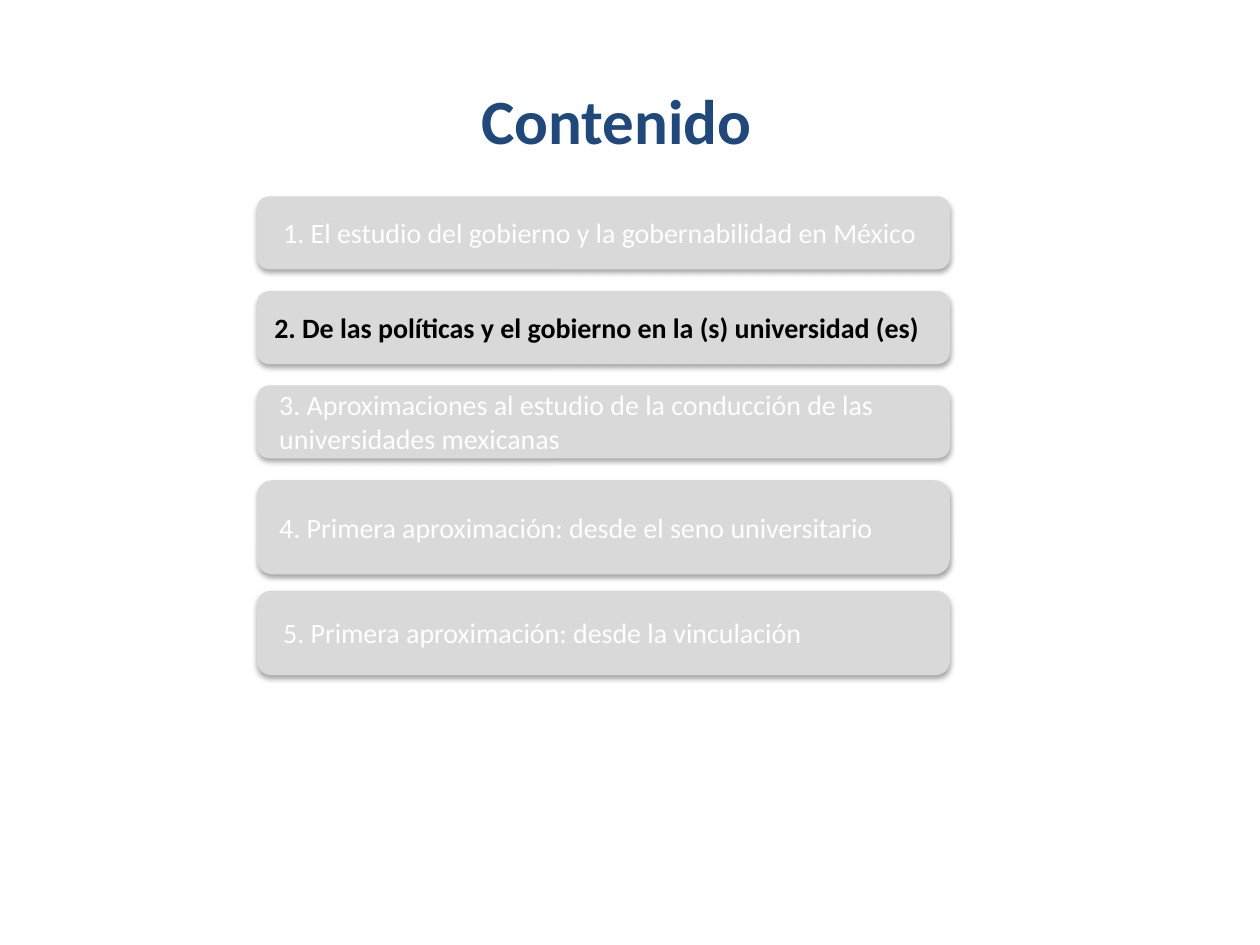
from lxml import etree
from pptx import Presentation
from pptx.dml.color import RGBColor
from pptx.enum.shapes import MSO_SHAPE as Shape
from pptx.enum.text import MSO_ANCHOR as Anchor, MSO_AUTO_SIZE as Fit, PP_ALIGN as Align
from pptx.oxml import parse_xml
from pptx.util import Cm, Pt

GREY = RGBColor(0xD9, 0xD9, 0xD9)
NAVY = RGBColor(0x1F, 0x49, 0x7D)
WHITE = RGBColor(0xFF, 0xFF, 0xFF)
BLACK = RGBColor(0, 0, 0)
FONT = "Calibri"
NS = "http://schemas.openxmlformats.org/drawingml/2006/main"
SHADOW = (
    f'<a:effectLst xmlns:a="{NS}"><a:outerShdw blurRad="{Pt(3.1)}" dist="{Pt(1.8)}" '
    'dir="5400000" rotWithShape="0"><a:srgbClr val="000000"><a:alpha val="35000"/>'
    "</a:srgbClr></a:outerShdw></a:effectLst>"
)
# top, height, text indent, text width, text height, label
TOPICS = [
    (0, 1.47, 0.28, 13.41, 0.94, "1. El estudio del gobierno y la gobernabilidad en México"),
    (1.91, 1.47, 0.1, 13.59, 0.94, "2. De las políticas y el gobierno en la (s) universidad (es)"),
    (3.81, 1.47, 0.2, 13.77, 1.63,
     "3. Aproximaciones al estudio de la conducción de las universidades mexicanas"),
    (5.72, 1.9, 0.2, 12.7, 0.94, "4. Primera aproximación: desde el seno universitario"),
    (7.95, 1.7, 0.28, 12.7, 0.94, "5. Primera aproximación: desde la vinculación"),
]
ACTIVE = 1


def add_text(slide, box, text, size, color, bold=False, wrap=True):
    """Place one paragraph of text in a box given in centimetres."""
    frame = slide.shapes.add_textbox(*map(Cm, box)).text_frame
    frame.word_wrap = wrap
    frame.auto_size = Fit.SHAPE_TO_FIT_TEXT
    frame.vertical_anchor = Anchor.TOP
    para = frame.paragraphs[0]
    para.text = text
    para.alignment = Align.LEFT
    font = para.font
    font.name, font.size, font.bold = FONT, Pt(size), bold
    font.color.rgb = color


def add_bar(slide, box):
    """Place a grey rounded bar with a soft shadow below it."""
    bar = slide.shapes.add_shape(Shape.ROUNDED_RECTANGLE, *map(Cm, box))
    bar.fill.solid()
    bar.fill.fore_color.rgb = GREY
    bar.line.fill.background()
    bar.shadow.inherit = False
    props = bar.fill._xPr
    old = props.find(f"{{{NS}}}effectLst")
    props.replace(old, parse_xml(SHADOW))


def add_topics(slide, left, top, width):
    """Stack the topic bars, each with its label centred in height."""
    for i, (drop, high, indent, wide, tall, label) in enumerate(TOPICS):
        y = top + drop
        add_bar(slide, (left, y, width, high))
        active = i == ACTIVE
        box = (left + indent, y + (high - tall) / 2, wide, tall)
        add_text(slide, box, label, 16, BLACK if active else WHITE, active)


def main():
    """Build the contents slide and save it."""
    deck = Presentation()
    deck.slide_width, deck.slide_height = Cm(25.4), Cm(19.05)
    slide = deck.slides.add_slide(deck.slide_layouts[6])
    add_topics(slide, 5.18, 3.96, 13.97)
    add_text(slide, (9.45, 1.52, 6.02, 1.8), "Contenido", 36, NAVY, bold=True, wrap=False)
    deck.save("out.pptx")


if __name__ == "__main__":
    main()
